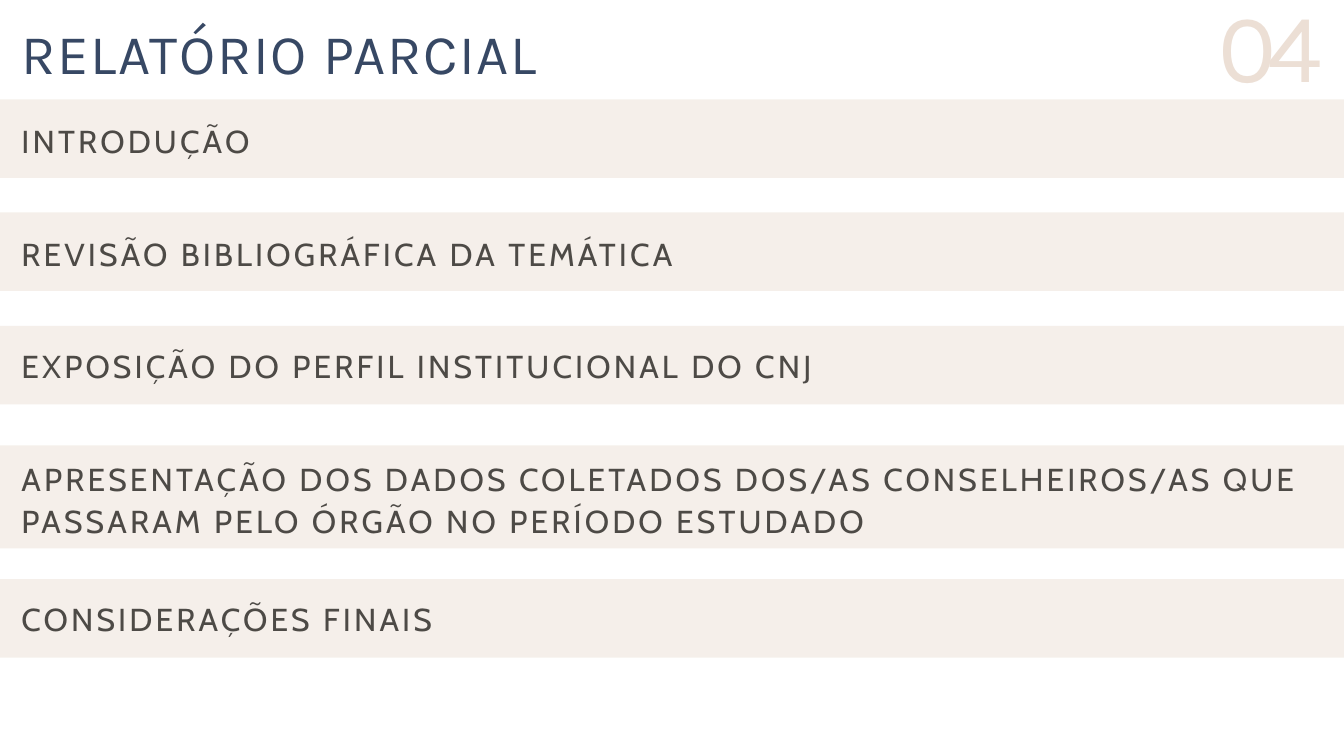
"""Build the partial report outline slide."""
from lxml import etree
from pptx import Presentation
from pptx.dml.color import RGBColor
from pptx.enum import shapes, text
from pptx.oxml import ns
from pptx.util import Cm, Pt

NAVY = RGBColor(0x37, 0x48, 0x64)
GRAY = RGBColor(0x4D, 0x4A, 0x46)
SAND = RGBColor(0xE4, 0xD4, 0xC5)
PALE_SAND = RGBColor(0xEC, 0xDF, 0xD5)

MARGIN = Cm(0.81)
SECTIONS = [
    ("INTRODUÇÃO", 3.76, 2.97, 0),
    ("REVISÃO BIBLIOGRÁFICA DA TEMÁTICA", 8.03, 2.97, 76),
    ("EXPOSIÇÃO DO PERFIL INSTITUCIONAL DO CNJ", 12.32, 2.97, 76),
    ("APRESENTAÇÃO DOS DADOS COLETADOS DOS/AS CONSELHEIROS/AS QUE "
     "PASSARAM PELO ÓRGÃO NO PERÍODO ESTUDADO", 16.84, 3.89, 77.5),
    ("CONSIDERAÇÕES FINAIS", 21.89, 2.97, 61.5),
]


def place(shape, left, top, width, height):
    """Move a text shape and clear its insets."""
    shape.left, shape.top, shape.width, shape.height = left, top, width, height
    frame = shape.text_frame
    frame.margin_left = frame.margin_right = 0
    frame.margin_top = frame.margin_bottom = 0
    frame.word_wrap = True
    frame.auto_size = text.MSO_AUTO_SIZE.NONE
    frame.vertical_anchor = text.MSO_ANCHOR.TOP
    return frame


def write(paragraph, words, font_name, size, color, leading, tracking):
    """Fill a paragraph with letter-spaced text and no bullet."""
    run = paragraph.add_run()
    run.text = words
    run.font._element.set("spc", str(round(tracking * 100)))
    font = paragraph.font
    font.name, font.size = font_name, Pt(size)
    font.color.rgb = color
    paragraph.alignment = text.PP_ALIGN.LEFT
    paragraph.line_spacing = Pt(leading)
    paragraph.space_before = paragraph.space_after = Pt(0)
    properties = paragraph._p.get_or_add_pPr()
    properties.set("marL", "0")
    properties.set("indent", "0")
    bullet = etree.Element(ns.qn("a:buNone"))
    properties.find(ns.qn("a:defRPr")).addprevious(bullet)


def add_band(slide, top, height, width):
    """Add a translucent full-width band."""
    band = slide.shapes.add_shape(
        shapes.MSO_SHAPE.RECTANGLE, 0, Cm(top), width, Cm(height))
    band.shadow.inherit = False
    band.line.fill.background()
    band.fill.solid()
    band.fill.fore_color.rgb = SAND
    color = band._element.spPr.find(".//" + ns.qn("a:srgbClr"))
    etree.SubElement(color, ns.qn("a:alpha"), val="35000")


def add_title(slide):
    """Fill the title placeholder."""
    frame = place(slide.shapes.title, MARGIN, Cm(0.71), Cm(36.07), Cm(2.57))
    write(frame.paragraphs[0], "RELATÓRIO PARCIAL", "Karla", 60, NAVY, 72, 1.8)


def add_page_number(slide):
    """Add the large pale number in the corner."""
    box = slide.shapes.add_textbox(0, 0, 0, 0)
    frame = place(box, Cm(46.05), Cm(0.9), Cm(4), Cm(2.96))
    write(frame.paragraphs[0], "04", "Karla", 105, PALE_SAND, 84, -10)


def add_sections(slide, width):
    """Fill the body placeholder with one section per band."""
    body = slide.placeholders[1]
    frame = place(body, MARGIN, Cm(4.5), Cm(48.67), Cm(19.6))
    for index, (words, top, height, gap) in enumerate(SECTIONS):
        add_band(slide, top, height, width)
        paragraph = frame.add_paragraph() if index else frame.paragraphs[0]
        write(paragraph, words, "Cabin", 34, GRAY, 44.2, 3.4)
        paragraph.space_before = Pt(gap)
    slide.shapes._spTree.append(body._element)


def main():
    """Create and save the presentation."""
    presentation = Presentation()
    presentation.slide_width = Cm(50.8)
    presentation.slide_height = Cm(28.58)
    slide = presentation.slides.add_slide(presentation.slide_layouts[1])
    add_title(slide)
    add_page_number(slide)
    add_sections(slide, presentation.slide_width)
    presentation.save("out.pptx")


if __name__ == "__main__":
    main()
